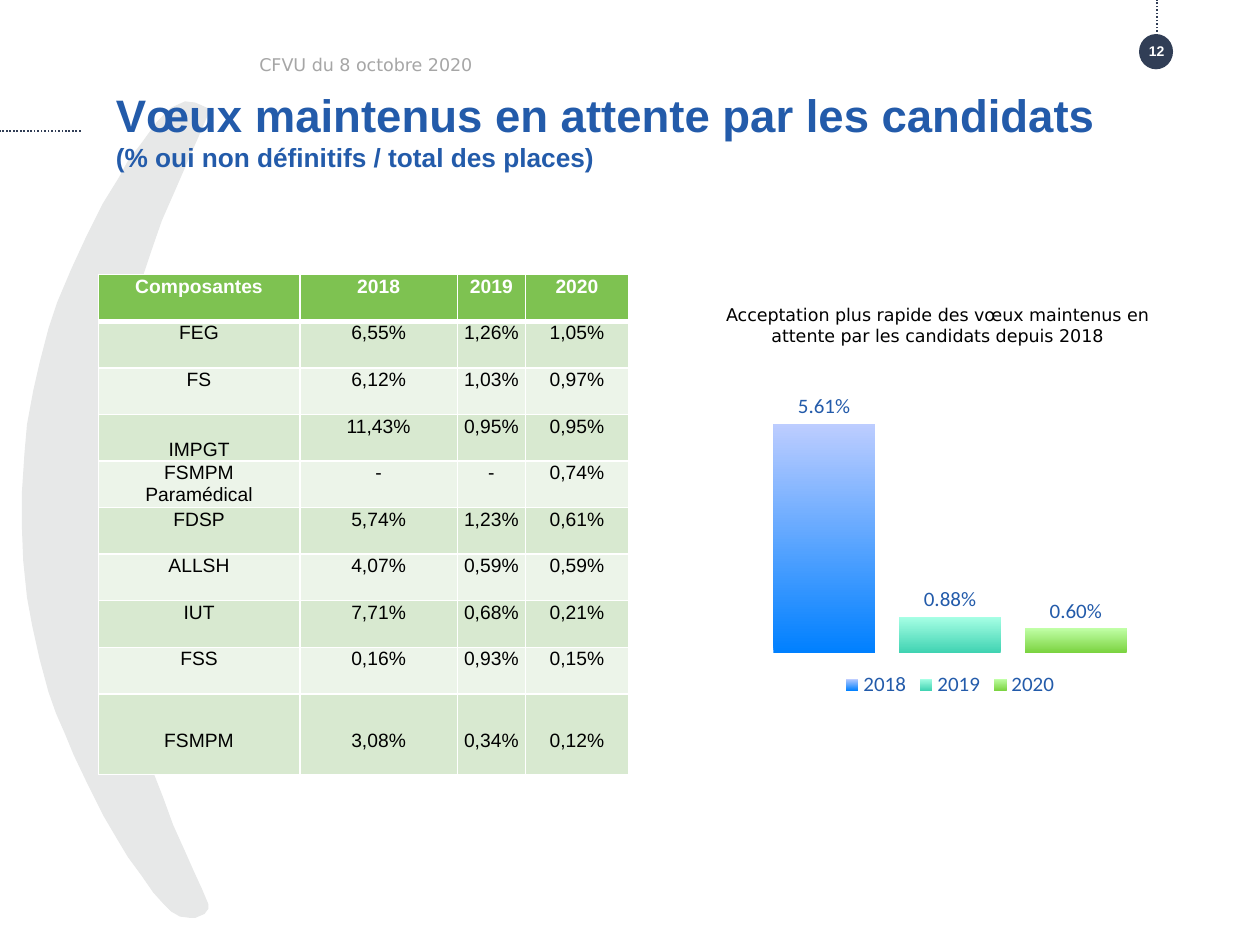
from dataclasses import dataclass

from lxml import etree
from pptx import Presentation
from pptx.chart.data import CategoryChartData
from pptx.dml.color import RGBColor
from pptx.enum.chart import XL_CHART_TYPE, XL_LABEL_POSITION, XL_LEGEND_POSITION
from pptx.enum.dml import MSO_LINE
from pptx.enum.shapes import MSO_CONNECTOR, MSO_SHAPE
from pptx.enum.text import MSO_ANCHOR, MSO_AUTO_SIZE, PP_ALIGN
from pptx.oxml.ns import qn
from pptx.util import Inches, Pt

LEFT, CENTER = PP_ALIGN.LEFT, PP_ALIGN.CENTER
TOP, MIDDLE, BOTTOM = MSO_ANCHOR.TOP, MSO_ANCHOR.MIDDLE, MSO_ANCHOR.BOTTOM
COLUMN = XL_CHART_TYPE.COLUMN_CLUSTERED
OUTSIDE = XL_LABEL_POSITION.OUTSIDE_END
BELOW = XL_LEGEND_POSITION.BOTTOM


@dataclass(frozen=True)
class Theme:
    sans: str = "Arial"
    plain: str = "DejaVu Sans"
    chart: str = "Calibri"
    blue: str = "235BAA"
    navy: str = "313E56"
    pale: str = "E7E8E8"
    grey: str = "A6A6A6"
    black: str = "000000"
    white: str = "FFFFFF"
    head: str = "7EC251"
    bands: tuple = ("D8E9D0", "ECF4E9")
    bars: tuple = (("0080FF", "BDCDFF"), ("40D3B2", "A7FFE5"), ("7BD340", "C1FFA7"))
    big: int = 26
    sub: int = 15
    legend: int = 12
    cell: int = 11
    note: int = 10
    page: int = 8


CRESCENT = [
    (1.65, 0.9), (1.64, 0.86), (1.55, 0.82), (1.47, 0.81), (1.36, 0.86),
    (1.25, 0.97), (1.12, 1.15), (1.02, 1.28), (0.95, 1.41), (0.82, 1.62),
    (0.69, 1.88), (0.57, 2.14), (0.46, 2.4), (0.39, 2.61), (0.32, 2.88),
    (0.27, 3.1), (0.22, 3.37), (0.2, 3.6), (0.18, 3.9), (0.18, 4.2),
    (0.19, 4.45), (0.22, 4.74), (0.26, 4.96), (0.32, 5.23), (0.39, 5.49),
    (0.45, 5.66), (0.52, 5.82), (0.59, 5.99), (0.69, 6.2), (0.83, 6.48),
    (0.93, 6.65), (1.02, 6.8), (1.13, 6.95), (1.22, 7.08), (1.31, 7.18),
    (1.36, 7.23), (1.43, 7.27), (1.51, 7.28), (1.55, 7.28), (1.62, 7.25),
    (1.65, 7.21), (1.65, 7.18), (1.6, 7.06), (1.54, 6.93), (1.46, 6.75),
    (1.37, 6.55), (1.29, 6.33), (1.2, 6.1), (1.13, 5.89), (1.07, 5.7),
    (1.02, 5.51), (0.96, 5.25), (0.9, 4.92), (0.87, 4.7), (0.84, 4.41),
    (0.83, 4.17), (0.83, 3.93), (0.85, 3.63), (0.87, 3.34), (0.91, 3.11),
    (0.95, 2.89), (1.03, 2.52), (1.11, 2.25), (1.19, 2.01), (1.28, 1.75),
    (1.39, 1.5), (1.52, 1.2), (1.6, 1.02),
]
ROWS = [
    ("Composantes", "2018", "2019", "2020"),
    ("FEG", "6,55%", "1,26%", "1,05%"),
    ("FS", "6,12%", "1,03%", "0,97%"),
    ("IMPGT", "11,43%", "0,95%", "0,95%"),
    ("FSMPM\nParamédical", "-", "-", "0,74%"),
    ("FDSP", "5,74%", "1,23%", "0,61%"),
    ("ALLSH", "4,07%", "0,59%", "0,59%"),
    ("IUT", "7,71%", "0,68%", "0,21%"),
    ("FSS", "0,16%", "0,93%", "0,15%"),
    ("FSMPM", "3,08%", "0,34%", "0,12%"),
]
RATES = [("2018", 0.0561), ("2019", 0.0088), ("2020", 0.006)]


def rgb(code):
    return RGBColor.from_string(code)


def inset(frame, left=0, top=0, right=0, bottom=0):
    frame.margin_left, frame.margin_top = Inches(left), Inches(top)
    frame.margin_right, frame.margin_bottom = Inches(right), Inches(bottom)


class Deck:
    def __init__(self, theme):
        self.theme = theme
        self.file = Presentation()
        self.file.slide_width, self.file.slide_height = Inches(10), Inches(7.5)
        self.slide = self.file.slides.add_slide(self.file.slide_layouts[5])
        self.shapes = self.slide.shapes

    def style(self, font, size, color, name, bold=False):
        font.size, font.name, font.bold = Pt(size), name, bold
        font.color.rgb = rgb(color)

    def run(self, para, text, *look):
        part = para.add_run()
        part.text = text
        self.style(part.font, *look)

    def paint(self, shape, color):
        shape.shadow.inherit = False
        shape.fill.solid()
        shape.fill.fore_color.rgb = rgb(color)

    def crescent(self, points, color):
        path = [(Inches(x), Inches(y)) for x, y in points]
        pen = self.shapes.build_freeform(*path[0])
        pen.add_line_segments(path[1:])
        shape = pen.convert_to_shape()
        self.paint(shape, color)
        shape.line.color.rgb = rgb(color)
        shape.line.width = Pt(0.75)

    def disc(self, box, color):
        shape = self.shapes.add_shape(MSO_SHAPE.OVAL, *map(Inches, box))
        self.paint(shape, color)
        shape.line.fill.background()

    def dots(self, ends, color):
        line = self.shapes.add_connector(MSO_CONNECTOR.STRAIGHT, *map(Inches, ends))
        line.line.color.rgb = rgb(color)
        line.line.width = Pt(1)
        line.line.dash_style = MSO_LINE.ROUND_DOT
        etree.SubElement(line.element.spPr, qn("a:effectLst"))

    def title(self, box, runs):
        shape = self.shapes.title
        # Bring the title in front of the backdrop.
        shape.element.getparent().append(shape.element)
        shape.left, shape.top, shape.width, shape.height = map(Inches, box)
        frame = shape.text_frame
        frame.auto_size, frame.word_wrap = MSO_AUTO_SIZE.NONE, True
        frame.vertical_anchor = TOP
        inset(frame, top=0.04)
        para = frame.paragraphs[0]
        para.alignment = LEFT
        for text, size in runs:
            self.run(para, text, size, self.theme.blue, self.theme.sans, True)

    def text(self, box, words, *look, align=LEFT, tight=False):
        frame = self.shapes.add_textbox(*map(Inches, box)).text_frame
        frame.word_wrap, frame.vertical_anchor = True, MIDDLE
        if tight:
            inset(frame)
        para = frame.paragraphs[0]
        para.alignment = align
        self.run(para, words, *look)

    def border(self, cell, side, width):
        line = etree.SubElement(cell._tc.get_or_add_tcPr(), qn("a:ln" + side), w=str(Pt(width)))
        fill = etree.SubElement(line, qn("a:solidFill"))
        etree.SubElement(fill, qn("a:srgbClr"), val=self.theme.white)

    def cell(self, cell, words, head, band, anchor):
        look = self.theme
        for side in "LRTB":
            self.border(cell, side, 3 if head and side == "B" else 1)
        cell.fill.solid()
        cell.fill.fore_color.rgb = rgb(band)
        cell.vertical_anchor = anchor
        inset(cell, 0.01, 0.11 if anchor == MIDDLE else 0.01, 0.01)
        for i, line in enumerate(words.split("\n")):
            frame = cell.text_frame
            para = frame.add_paragraph() if i else frame.paragraphs[0]
            para.alignment = CENTER
            self.run(para, line, look.cell, look.white if head else look.black, look.sans, head)

    def table(self, box, rows, widths, heights):
        grid = self.shapes.add_table(len(rows), len(widths), *map(Inches, box)).table
        for col, width in zip(grid.columns, widths):
            col.width = Inches(width)
        for r, (row, height) in enumerate(zip(rows, heights)):
            grid.rows[r].height = Inches(height)
            band = self.theme.bands[(r - 1) % 2] if r else self.theme.head
            for c, words in enumerate(row):
                anchor = MIDDLE if r == len(rows) - 1 else BOTTOM if words == "IMPGT" else TOP
                self.cell(grid.cell(r, c), words, r == 0, band, anchor)

    def chart(self, box, rates):
        look = self.theme
        data = CategoryChartData(number_format="0.00%")
        data.categories = ["1"]
        for name, rate in rates:
            data.add_series(name, [rate])
        chart = self.shapes.add_chart(COLUMN, *map(Inches, box), data).chart
        self.style(chart.font, look.note, look.black, look.chart)
        chart.has_title, chart.has_legend = False, True
        chart.legend.position, chart.legend.include_in_layout = BELOW, False
        self.style(chart.legend.font, look.legend, look.blue, look.chart)
        chart.value_axis.has_major_gridlines = False
        chart.value_axis.minimum_scale = 0
        chart.value_axis.visible = chart.category_axis.visible = False
        plot = chart.plots[0]
        plot.gap_width, plot.overlap, plot.vary_by_categories = 100, -24, False
        for bar, shades in zip(plot.series, look.bars):
            fill = bar.format.fill
            fill.gradient()
            fill.gradient_angle = 90
            for stop, shade in zip(fill.gradient_stops, shades):
                stop.color.rgb = rgb(shade)
            tags = bar.data_labels
            tags.show_value, tags.position = True, OUTSIDE
            tags.number_format, tags.number_format_is_linked = "0.00%", False
            self.style(tags.font, look.legend, look.blue, look.chart)


def main():
    look = Theme()
    deck = Deck(look)
    deck.crescent(CRESCENT, look.pale)
    deck.disc((9.04, 0.27, 0.27, 0.28), look.navy)
    deck.dots((9.18, 0.28, 9.18, 0), look.navy)
    deck.dots((0.64, 1.04, 0, 1.04), look.navy)
    deck.text((8.93, 0.33, 0.5, 0.15), "12", look.page, look.white, look.sans, True, align=CENTER)
    deck.title((0.92, 0.65, 7.82, 0.7), [
        ("Vœux maintenus en attente par les candidats ", look.big),
        ("(% oui non définitifs / total des places)", look.sub),
    ])
    deck.table((0.78, 2.18, 4.2, 3.97), ROWS, (1.6, 1.25, 0.54, 0.82), [0.37] * 9 + [0.64])
    deck.chart((5.66, 3.13, 3.76, 2.44), RATES)
    deck.text((5.62, 2.41, 3.64, 0.34),
              "Acceptation plus rapide des vœux maintenus en attente par les candidats depuis 2018",
              look.note, look.black, look.plain, align=CENTER, tight=True)
    deck.text((1.96, 0.29, 6.62, 0.44), "CFVU du 8 octobre 2020", look.note, look.grey, look.plain)
    deck.file.save("out.pptx")


if __name__ == "__main__":
    main()
